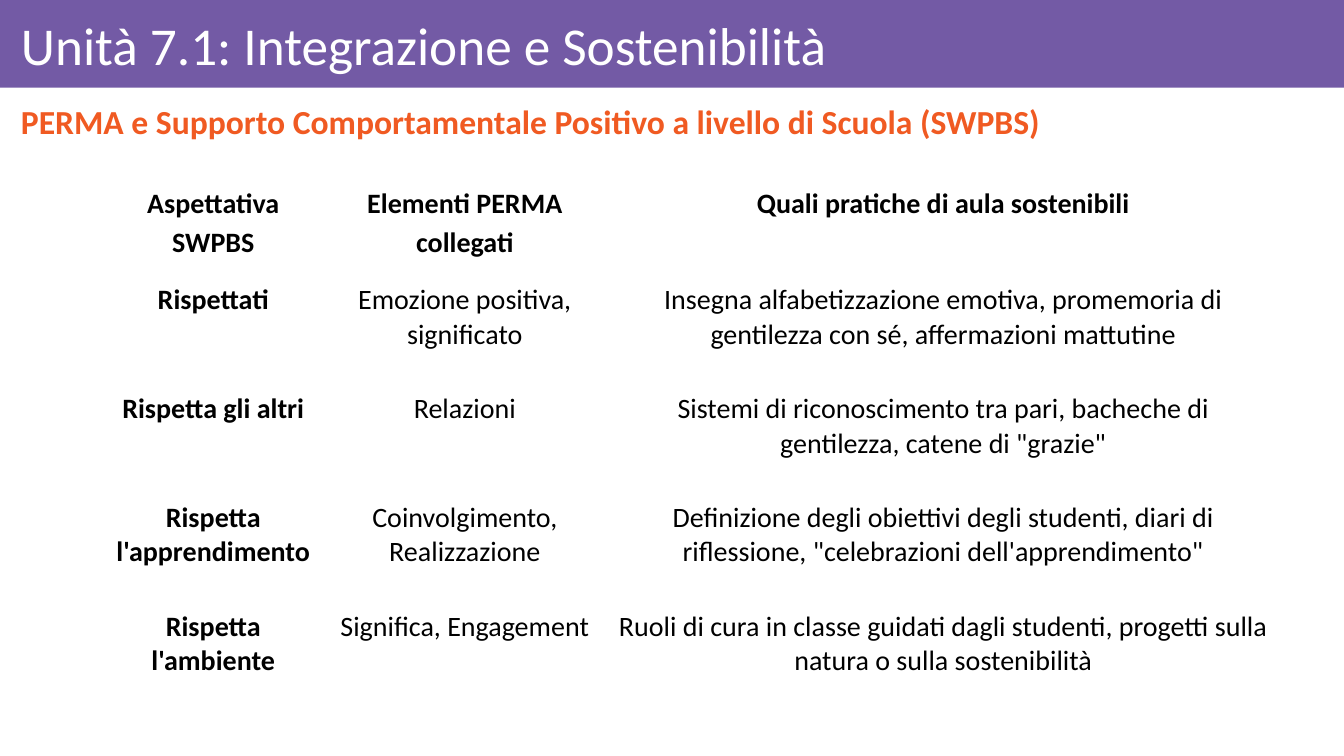
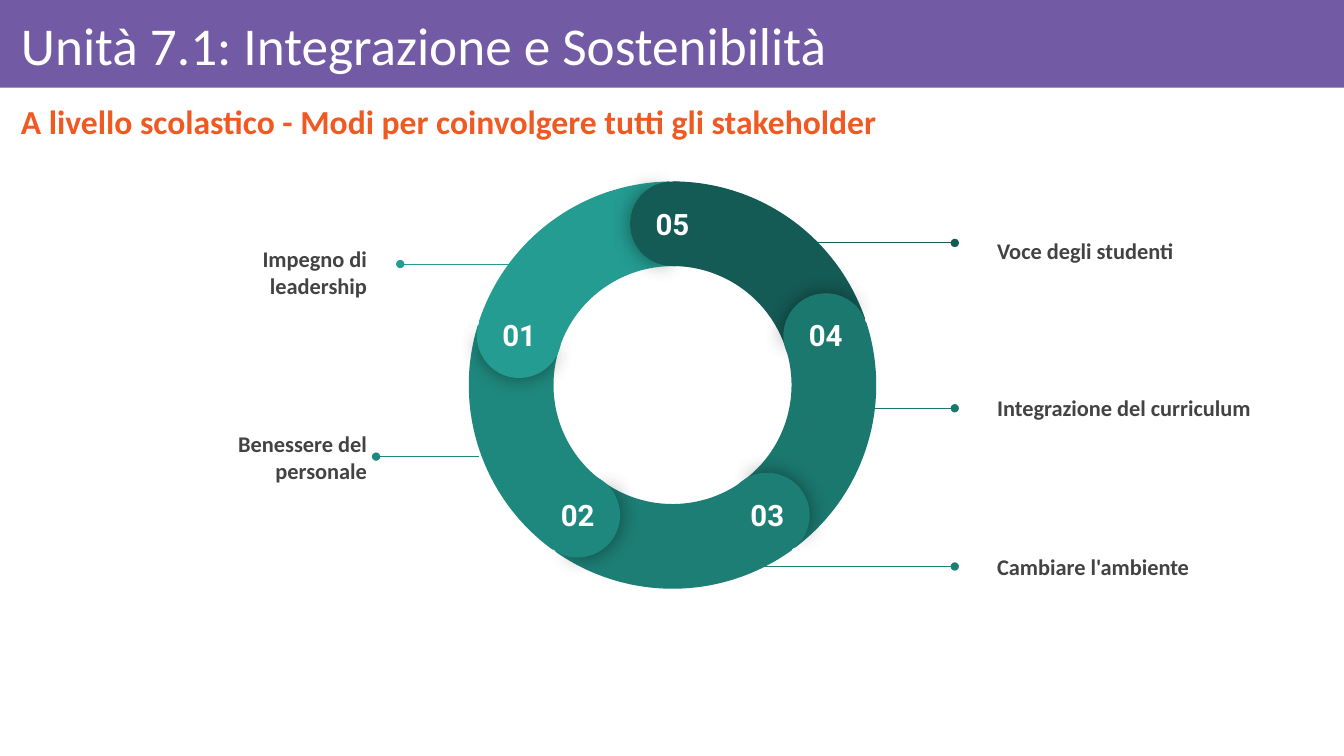
import dataclasses
import math

import lxml.etree
import pptx
import pptx.dml.color
import pptx.enum.shapes
import pptx.enum.text
import pptx.oxml.ns
import pptx.util

PX = 9144
WIDE, HIGH = 1333, 750
SHAPE = pptx.enum.shapes.MSO_SHAPE
ALIGN = pptx.enum.text.PP_ALIGN
ANCHOR = pptx.enum.text.MSO_ANCHOR
qn = pptx.oxml.ns.qn


@dataclasses.dataclass(frozen=True)
class Theme:
    font: str = "Calibri"
    digit: str = "Roboto"
    band: str = "735AA5"
    white: str = "FFFFFF"
    accent: str = "F05A22"
    ink: str = "000000"
    label: str = "434343"
    teals: tuple = ("249C91", "1F887E", "1D7E75", "1B786F", "155B55")
    title_pt: int = 38
    sub_pt: int = 24
    cell_pt: int = 20
    label_pt: int = 16
    digit_pt: int = 21


class Deck:
    """Holds the theme and the current slide, and draws each kind of element."""

    def __init__(self, theme):
        self.theme = theme
        self.show = pptx.Presentation()
        self.show.slide_width = WIDE * PX
        self.show.slide_height = HIGH * PX
        self.slide = None

    def page(self, title, sub):
        t = self.theme
        self.slide = self.show.slides.add_slide(self.show.slide_layouts[6])
        self.shape(SHAPE.RECTANGLE, (0, 0, WIDE, 87), t.band)
        self.text((11, 9, 1306, 78), title, t.title_pt, t.white,
                  pads=(10, 6, 6, 6), lead=0.9)
        self.text((11, 93, 1306, 60), sub, t.sub_pt, t.accent, bold=True,
                  align=ALIGN.JUSTIFY, pads=(10, 5, 10, 5), lead=0.9)

    def shape(self, kind, box, fill, turn=0, knobs=(), glow=False):
        item = self.slide.shapes.add_shape(kind, *(n * PX for n in box))
        item.fill.solid()
        item.fill.fore_color.rgb = pptx.dml.color.RGBColor.from_string(fill)
        item.line.fill.background()
        item.shadow.inherit = False
        item.rotation = turn
        for i, knob in enumerate(knobs):
            item.adjustments[i] = knob
        if glow:
            self.glow(item)

    def glow(self, item):
        sub = lxml.etree.SubElement
        effects = item._element.spPr.find(qn("a:effectLst"))
        shade = sub(effects, qn("a:outerShdw"), blurRad=str(pptx.util.Pt(15)),
                    dist="0", dir="0", algn="ctr", rotWithShape="0")
        tint = sub(shade, qn("a:srgbClr"), val=self.theme.ink)
        sub(tint, qn("a:alpha"), val="43000")

    def style(self, frame, size, color, bold, align, font=None, lead=None):
        para = frame.paragraphs[0]
        para.alignment = align
        if lead:
            para.line_spacing = lead
        for run in para.runs:
            run.font.name = font or self.theme.font
            run.font.size = pptx.util.Pt(size)
            run.font.bold = bold
            run.font.color.rgb = pptx.dml.color.RGBColor.from_string(color)

    def text(self, box, words, size, color, bold=False, align=ALIGN.LEFT,
             pads=(13, 13, 13, 13), anchor=ANCHOR.MIDDLE, font=None, lead=None):
        frame = self.slide.shapes.add_textbox(*(n * PX for n in box)).text_frame
        frame.word_wrap = True
        frame.vertical_anchor = anchor
        (frame.margin_left, frame.margin_top,
         frame.margin_right, frame.margin_bottom) = (n * PX for n in pads)
        frame.text = words
        self.style(frame, size, color, bold, align, font, lead)

    def line(self, start, end, y, color):
        wire = self.slide.shapes.add_connector(
            pptx.enum.shapes.MSO_CONNECTOR.STRAIGHT,
            start * PX, y * PX, end * PX, y * PX)
        wire.line.width = pptx.util.Pt(0.75)
        wire.line.color.rgb = pptx.dml.color.RGBColor.from_string(color)
        props = wire._element.spPr
        lxml.etree.SubElement(props.find(qn("a:ln")), qn("a:tailEnd"), type="oval")
        lxml.etree.SubElement(props, qn("a:effectLst"))

    def table(self, left, top, cols, tall, rows):
        t = self.theme
        grid = self.slide.shapes.add_table(
            len(rows), len(cols), left * PX, top * PX,
            sum(cols) * PX, sum(tall) * PX).table
        grid.first_row = grid.horz_banding = False
        for col, width in zip(grid.columns, cols):
            col.width = width * PX
        for r, row in enumerate(rows):
            grid.rows[r].height = tall[r] * PX
            for c, words in enumerate(row):
                cell = grid.cell(r, c)
                cell.fill.background()
                cell.margin_left = cell.margin_right = 10 * PX
                cell.margin_top = cell.margin_bottom = 10 * PX
                cell.text_frame.text = words
                self.style(cell.text_frame, t.cell_pt, t.ink, r == 0 or c == 0,
                           ALIGN.CENTER, lead=1.15 if r == 0 else None)

    def label(self, words, mid, left):
        t = self.theme
        box = (174, mid - 67, 203, 135) if left else (976, mid - 67, 310, 135)
        self.text(box, words, t.label_pt, t.label, bold=True,
                  align=ALIGN.RIGHT if left else ALIGN.LEFT)

    def ring(self, x, y, outer, thick):
        t = self.theme
        box = (x - outer, y - outer, 2 * outer, 2 * outer)
        steps = [(72 * i, t.teals[-1 - i]) for i in range(5)]
        for turn, color in steps:
            self.shape(SHAPE.BLOCK_ARC, box, color, 60 + turn,
                       (126.03, 168.68, thick / (2 * outer)))
        mid, half = outer - thick // 2, thick // 2
        for i, (turn, color) in enumerate(steps):
            angle = math.radians(turn - 90)
            cx = x + round(mid * math.cos(angle))
            cy = y + round(mid * math.sin(angle))
            cap = (cx - half, cy - half, thick, thick)
            self.shape(SHAPE.PIE, cap, color, (356 + turn) % 360,
                       (61.9, 149.96), glow=True)
            self.shape(SHAPE.PIE, cap, color, (176 + turn) % 360, (40.28, 171.84))
            self.text((cx - 37, cy - 31, 74, 39), f"0{5 - i}", t.digit_pt,
                      t.white, bold=True, align=ALIGN.CENTER,
                      anchor=ANCHOR.TOP, font=t.digit)


TITLE = "Unità 7.1: Integrazione e Sostenibilità"

ROWS = [
    ("Aspettativa SWPBS", "Elementi PERMA collegati",
     "Quali pratiche di aula sostenibili"),
    ("Rispettati", "Emozione positiva, significato",
     "Insegna alfabetizzazione emotiva, promemoria di gentilezza con sé, "
     "affermazioni mattutine"),
    ("Rispetta gli altri", "Relazioni",
     "Sistemi di riconoscimento tra pari, bacheche di gentilezza, "
     'catene di "grazie"'),
    ("Rispetta l'apprendimento", "Coinvolgimento, Realizzazione",
     "Definizione degli obiettivi degli studenti, diari di riflessione, "
     "\"celebrazioni dell'apprendimento\""),
    ("Rispetta l'ambiente", "Significa, Engagement",
     "Ruoli di cura in classe guidati dagli studenti, progetti sulla natura "
     "o sulla sostenibilità"),
]

LINKS = [
    ("Impegno di leadership", 515, 397, 262, 269),
    ("Benessere del personale", 475, 373, 453, 453),
    ("Cambiare l'ambiente", 679, 947, 562, 562),
    ("Integrazione del curriculum", 818, 947, 405, 404),
    ("Voce degli studenti", 760, 947, 241, 248),
]


def main():
    deck = Deck(Theme())
    deck.page(TITLE, "PERMA e Supporto Comportamentale Positivo "
                     "a livello di Scuola (SWPBS)")
    deck.table(104, 170, (215, 284, 665), [101] + [108] * 4, ROWS)

    deck.page(TITLE, "A livello scolastico - Modi per coinvolgere "
                     "tutti gli stakeholder")
    for color, (words, start, end, y, mid) in zip(deck.theme.teals, LINKS):
        deck.line(start, end, y, color)
        deck.label(words, mid, end < start)
    deck.ring(667, 382, 202, 84)
    deck.show.save("out.pptx")


if __name__ == "__main__":
    main()
